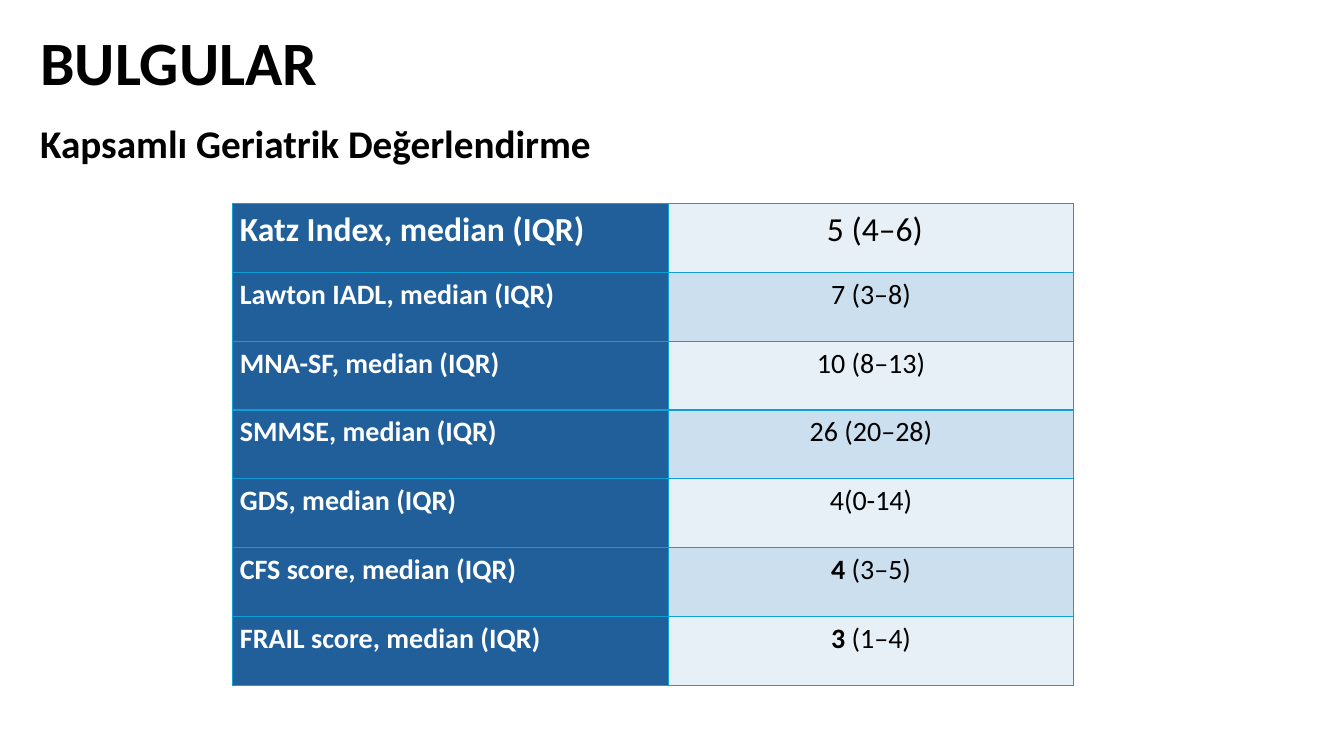
"""Build the geriatric assessment findings slide."""
import pptx
import pptx.dml.color
import pptx.enum.text
import pptx.oxml
import pptx.oxml.ns
import pptx.util

RGBColor = pptx.dml.color.RGBColor
Align = pptx.enum.text.PP_ALIGN
Anchor = pptx.enum.text.MSO_ANCHOR

BLACK = RGBColor(0x00, 0x00, 0x00)
WHITE = RGBColor(0xFF, 0xFF, 0xFF)
NAVY = RGBColor(0x21, 0x5F, 0x9A)
PALE = RGBColor(0xE7, 0xF0, 0xF7)
SOFT = RGBColor(0xCC, 0xDF, 0xEF)
BORDER = RGBColor(0x0F, 0x9E, 0xD5)

FONT = "Calibri"
EMU_PER_PX = 9144
COLUMN_WIDTHS = (432, 402)
TABLE_HEIGHT = 478

SCORES = [
    ("Katz Index", [(" 5 (4–6)", False)]),
    ("Lawton IADL", [("7 (3–8)", False)]),
    ("MNA-SF", [("10 (8–13)", False)]),
    ("SMMSE", [("26 (20–28)", False)]),
    ("GDS", [("4(0-14)", False)]),
    ("CFS score", [("4", True), (" (3–5)", False)]),
    ("FRAIL score", [("3", True), (" (1–4)", False)]),
]


def px(length):
    """Turn whole pixels into EMU."""
    return pptx.util.Emu(length * EMU_PER_PX)


def set_format(target, values):
    """Set each attribute named in a dict of format values."""
    for name, value in values.items():
        setattr(target, name, value)


def write_para(para, spans, size, color, layout):
    """Fill a paragraph with (text, bold) spans."""
    set_format(para, layout)
    for text, bold in spans:
        span = para.add_run()
        span.text = text
        set_format(span.font, {"name": FONT, "size": pptx.util.Pt(size), "bold": bold})
        span.font.color.rgb = color


def write_heading(box, place, text, size, frame_format, layout):
    """Place a heading box and write its bold text."""
    set_format(box, dict(zip(("left", "top", "width", "height"), map(px, place))))
    set_format(box.text_frame, {"word_wrap": True, **frame_format})
    write_para(box.text_frame.paragraphs[0], [(text, True)], size, BLACK, layout)


def add_borders(cell):
    """Draw a thin line on every side of a cell."""
    properties = cell._tc.get_or_add_tcPr()
    for side in ("lnL", "lnR", "lnT", "lnB"):
        properties.append(pptx.oxml.parse_xml(
            f'<a:{side} {pptx.oxml.ns.nsdecls("a")} w="12700"><a:solidFill>'
            f'<a:srgbClr val="{BORDER}"/></a:solidFill></a:{side}>'))


def write_cell(cell, spans, size, color, fill, alignment):
    """Format one table cell and write its spans."""
    add_borders(cell)
    cell.fill.solid()
    cell.fill.fore_color.rgb = fill
    set_format(cell, {
        "margin_left": px(7), "margin_right": px(7),
        "margin_top": 0, "margin_bottom": 0,
        "vertical_anchor": Anchor.TOP,
    })
    write_para(cell.text_frame.paragraphs[0], spans, size, color, {
        "alignment": alignment, "line_spacing": 1.15, "space_after": pptx.util.Pt(8),
    })


def add_score_table(page):
    """Add the table of test scores."""
    frame = page.shapes.add_table(len(SCORES), len(COLUMN_WIDTHS), px(231), px(202),
                                  px(sum(COLUMN_WIDTHS)), px(TABLE_HEIGHT))
    table = frame.table
    for column, width in zip(table.columns, COLUMN_WIDTHS):
        column.width = px(width)
    for index, (test, result) in enumerate(SCORES):
        size = 24 if index == 0 else 20
        label = [(f"{test}, median (IQR)", True)]
        band = SOFT if index % 2 else PALE
        write_cell(table.cell(index, 0), label, size, WHITE, NAVY, Align.JUSTIFY)
        write_cell(table.cell(index, 1), result, size, BLACK, band, Align.CENTER)


def main():
    """Build and save the deck."""
    deck = pptx.Presentation()
    set_format(deck, {"slide_width": px(1333), "slide_height": px(750)})
    page = deck.slides.add_slide(deck.slide_layouts.get_by_name("Title Only"))
    add_score_table(page)
    subtitle = page.shapes.add_textbox(0, 0, 0, 0)
    write_heading(subtitle, (30, 113, 601, 57), "Kapsamlı Geriatrik Değerlendirme", 28,
                  {"auto_size": pptx.enum.text.MSO_AUTO_SIZE.SHAPE_TO_FIT_TEXT}, {})
    write_heading(page.shapes.title, (30, 18, 1206, 94), "BULGULAR", 44,
                  {"vertical_anchor": Anchor.MIDDLE},
                  {"alignment": Align.LEFT, "line_spacing": 0.9})
    deck.save("out.pptx")


if __name__ == "__main__":
    main()
